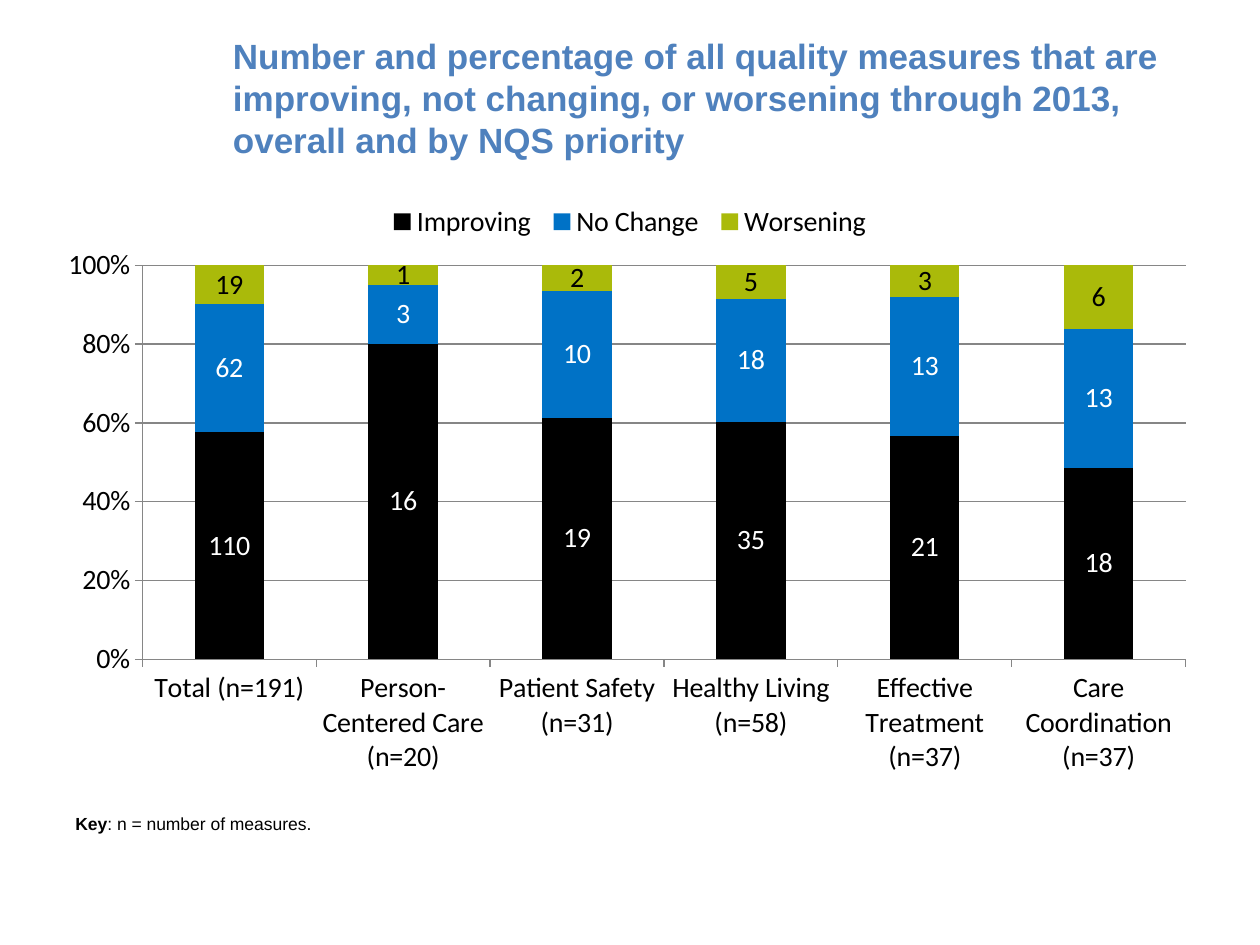
import lxml.etree
import pptx
import pptx.chart.data
import pptx.dml.color
import pptx.enum.chart
import pptx.enum.text
import pptx.oxml
import pptx.oxml.ns
import pptx.util
from pptx.util import Inches


def color(hex_string):
    return pptx.dml.color.RGBColor.from_string(hex_string)


def add_text(para, text, size=10, bold=False, fill="000000"):
    span = para.add_run()
    span.text = text
    span.font.name = "Arial"
    span.font.size = pptx.util.Pt(size)
    span.font.bold = bold
    span.font.color.rgb = color(fill)


deck = pptx.Presentation()
deck.slide_width, deck.slide_height = Inches(10), Inches(7.5)
page = deck.slides.add_slide(deck.slide_layouts[6])

# Title
title = page.shapes.add_textbox(Inches(1.75), Inches(0.3), Inches(7.75), Inches(0.95))
title.text_frame.word_wrap = True
title.text_frame.vertical_anchor = pptx.enum.text.MSO_ANCHOR.MIDDLE
add_text(
    title.text_frame.paragraphs[0],
    "Number and percentage of all quality measures that are improving, "
    "not changing, or worsening through 2013, overall and by NQS priority",
    size=20, bold=True, fill="4F81BD",
)

# Chart: name, counts, bar colour, label colour
measures = [
    ("Improving", (110, 16, 19, 35, 21, 18), "000000", "FFFFFF"),
    ("No Change", (62, 3, 10, 18, 13, 13), "0072C6", "FFFFFF"),
    ("Worsening", (19, 1, 2, 5, 3, 6), "AABA0A", "000000"),
]
data = pptx.chart.data.CategoryChartData()
data.categories = [
    "Total (n=191)", "Person-Centered Care (n=20)", "Patient Safety (n=31)",
    "Healthy Living (n=58)", "Effective Treatment (n=37)", "Care Coordination (n=37)",
]
for name, counts, _, _ in measures:
    data.add_series(name, counts)

chart = page.shapes.add_chart(
    pptx.enum.chart.XL_CHART_TYPE.COLUMN_STACKED_100,
    Inches(0.5), Inches(1.6), Inches(9), Inches(4.6), data,
).chart
chart.has_title = False
chart.font.name = "Calibri"
chart.font.size = pptx.util.Pt(16)
chart.font.color.rgb = color("000000")
chart.has_legend = True
chart.legend.position = pptx.enum.chart.XL_LEGEND_POSITION.TOP
chart.legend.include_in_layout = False

plot = chart.plots[0]
plot.gap_width = 150
plot.overlap = 100
plot.vary_by_categories = False
for series, (_, _, bar_color, label_color) in zip(plot.series, measures):
    series.format.fill.solid()
    series.format.fill.fore_color.rgb = color(bar_color)
    labels = series.data_labels
    labels.show_value = True
    labels.position = pptx.enum.chart.XL_LABEL_POSITION.CENTER
    labels.font.name = "Calibri"
    labels.font.size = pptx.util.Pt(16)
    labels.font.color.rgb = color(label_color)

value_axis = chart.value_axis
value_axis.minimum_scale, value_axis.maximum_scale = 0, 1
value_axis.major_unit = 0.2
value_axis.has_major_gridlines = True
value_axis.tick_labels.number_format = "0%"
value_axis.tick_labels.number_format_is_linked = False
for axis in (chart.category_axis, value_axis):
    axis.major_tick_mark = pptx.enum.chart.XL_TICK_MARK.OUTSIDE
    axis.tick_labels.font.name = "Calibri"
    axis.tick_labels.font.size = pptx.util.Pt(16)
    # Level labels wrap instead of turning
    label_body = axis._element.find(".//" + pptx.oxml.ns.qn("a:bodyPr"))
    label_body.set("rot", "0")
    label_body.set("vert", "horz")
for line in (chart.category_axis.format.line, value_axis.format.line,
             value_axis.major_gridlines.format.line):
    line.color.rgb = color("868686")
    line.width = pptx.util.Pt(0.75)

# Fixed places for plot and legend, as fractions of the chart
edges = {"xMode": "edge", "yMode": "edge"}
placements = [
    ("c:plotArea", 0, {"layoutTarget": "inner", **edges,
                       "x": 0.07, "y": 0.11, "w": 0.92, "h": 0.68}),
    ("c:legend", 1, {**edges, "x": 0.28, "y": 0, "w": 0.44, "h": 0.07}),
]
for part_tag, index, settings in placements:
    part = chart.element.find(".//" + pptx.oxml.ns.qn(part_tag))
    for old_layout in part.findall(pptx.oxml.ns.qn("c:layout")):
        part.remove(old_layout)
    layout = lxml.etree.Element(pptx.oxml.ns.qn("c:layout"))
    manual = lxml.etree.SubElement(layout, pptx.oxml.ns.qn("c:manualLayout"))
    for tag, setting in settings.items():
        lxml.etree.SubElement(manual, pptx.oxml.ns.qn("c:" + tag), val=str(setting))
    part.insert(index, layout)

# Key
key = page.shapes.add_textbox(Inches(0.5), Inches(6.4), Inches(2.13), Inches(0.27))
key.text_frame.word_wrap = False
key.text_frame.auto_size = pptx.enum.text.MSO_AUTO_SIZE.SHAPE_TO_FIT_TEXT
key_para = key.text_frame.paragraphs[0]
add_text(key_para, "Key", bold=True)
add_text(key_para, ": n = number of measures.")

deck.save("out.pptx")
